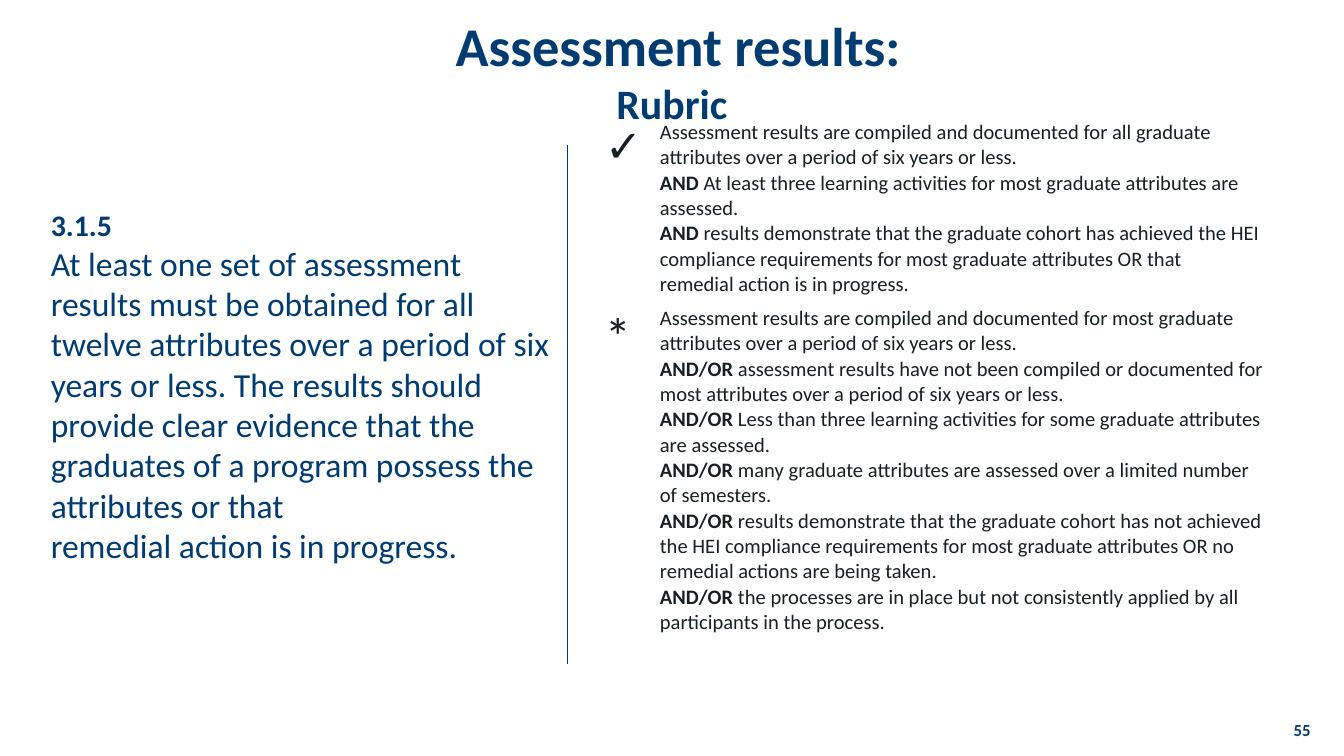
import pptx
import pptx.util
import pptx.dml.color
import pptx.enum.text
import pptx.enum.shapes
import pptx.oxml.ns
import lxml.etree

Inches = pptx.util.Inches
Align = pptx.enum.text.PP_ALIGN
Anchor = pptx.enum.text.MSO_ANCHOR
NAVY, INK = "003C71", "171F23"
PLAIN = "{2D5ABB26-0587-4C30-8999-92F81FD0307C}"  # table style without grid


def paint(target, code):
    target.rgb = pptx.dml.color.RGBColor.from_string(code)


def write(para, text, size, bold=False, color=NAVY):
    run = para.add_run()
    run.text = text
    style = {"name": "Calibri", "size": pptx.util.Pt(size), "bold": bold}
    for key, value in style.items():
        setattr(run.font, key, value)
    paint(run.font.color, color)


# Slide in 16:9
deck = pptx.Presentation()
deck.slide_width = Inches(10)
deck.slide_height = Inches(10) * 9 // 16
slide = deck.slides.add_slide(deck.slide_layouts[5])
shapes = slide.shapes

# Title in two sizes
title = shapes.title
place = {"left": 0.5, "top": 0.06, "width": 9, "height": 0.94}
for key, value in place.items():
    setattr(title, key, Inches(value))
frame = title.text_frame
frame.auto_size = pptx.enum.text.MSO_AUTO_SIZE.NONE
frame.vertical_anchor = Anchor.BOTTOM
para = frame.paragraphs[0]
para.alignment = Align.CENTER
write(para, " Assessment results:", 29.2, True)
para.add_line_break()
write(para, "Rubric", 22.4, True)

# Criterion on the left
frame = shapes.add_textbox(Inches(0.28), Inches(1.49), Inches(3.94), Inches(2.79)).text_frame
frame.word_wrap = True
lines = [
    ("3.1.5", 16, True),
    ("At least one set of assessment results must be obtained for all twelve "
     "attributes over a period of six years or less. The results should provide "
     "clear evidence that the graduates of a program possess the attributes or that", 18, False),
    ("remedial action is in progress.", 18, False),
]
for i, (text, size, bold) in enumerate(lines):
    para = frame.add_paragraph() if i else frame.paragraphs[0]
    write(para, text, size, bold)

# Divider
rule = shapes.add_connector(pptx.enum.shapes.MSO_CONNECTOR.STRAIGHT,
                            Inches(4.22), Inches(1.08), Inches(4.22), Inches(4.94))
paint(rule.line.color, NAVY)
rule.line.width = pptx.util.Pt(0.5)
lxml.etree.SubElement(rule._element.spPr, pptx.oxml.ns.qn("a:effectLst"))

# Page number
frame = shapes.add_textbox(Inches(9.49), Inches(5.35), Inches(0.36), Inches(0.16)).text_frame
layout = {"word_wrap": True, "vertical_anchor": Anchor.MIDDLE, "margin_top": 0, "margin_bottom": 0}
for key, value in layout.items():
    setattr(frame, key, value)
frame.paragraphs[0].alignment = Align.RIGHT
write(frame.paragraphs[0], "55", 9, True)

# Rubric: mark, mark size, row height, then (bold lead, text) paragraphs
rubric = [
    ("✓", 24, 1.12, [
        ("", "Assessment results are compiled and documented for all graduate "
             "attributes over a period of six years or less."),
        ("AND", " At least three learning activities for most graduate attributes are assessed."),
        ("AND", " results demonstrate that the graduate cohort has achieved the HEI "
                "compliance requirements for most graduate attributes OR that"),
        ("", "remedial action is in progress."),
    ]),
    ("*", 28, 1.89, [
        ("", "Assessment results are compiled and documented for most graduate "
             "attributes over a period of six years or less."),
        ("AND/OR ", "assessment results have not been compiled or documented for "
                    "most attributes over a period of six years or less."),
        ("AND/OR ", "Less than three learning activities for some graduate attributes are assessed."),
        ("AND/OR ", "many graduate attributes are assessed over a limited number of semesters."),
        ("AND/OR ", "results demonstrate that the graduate cohort has not achieved "
                    "the HEI compliance requirements for most graduate attributes OR no"),
        ("", "remedial actions are being taken."),
        ("AND/OR ", "the processes are in place but not consistently applied by all "
                    "participants in the process."),
    ]),
]
holder = shapes.add_table(2, 2, Inches(4.4), Inches(0.84), Inches(5.13), Inches(3.87))
table = holder.table
table.first_row = table.horz_banding = False
holder._element.find(".//" + pptx.oxml.ns.qn("a:tableStyleId")).text = PLAIN
for col, width in zip(table.columns, (0.41, 4.72)):
    col.width = Inches(width)
for row, (mark, size, height, items) in zip(table.rows, rubric):
    row.height = Inches(height)
    for cell in row.cells:
        cell.fill.background()
    write(row.cells[0].text_frame.paragraphs[0], mark, size, color=INK)
    frame = row.cells[1].text_frame
    for i, (lead, text) in enumerate(items):
        para = frame.add_paragraph() if i else frame.paragraphs[0]
        if lead:
            write(para, lead, 11, True, INK)
        write(para, text, 11, color=INK)

deck.save("out.pptx")
